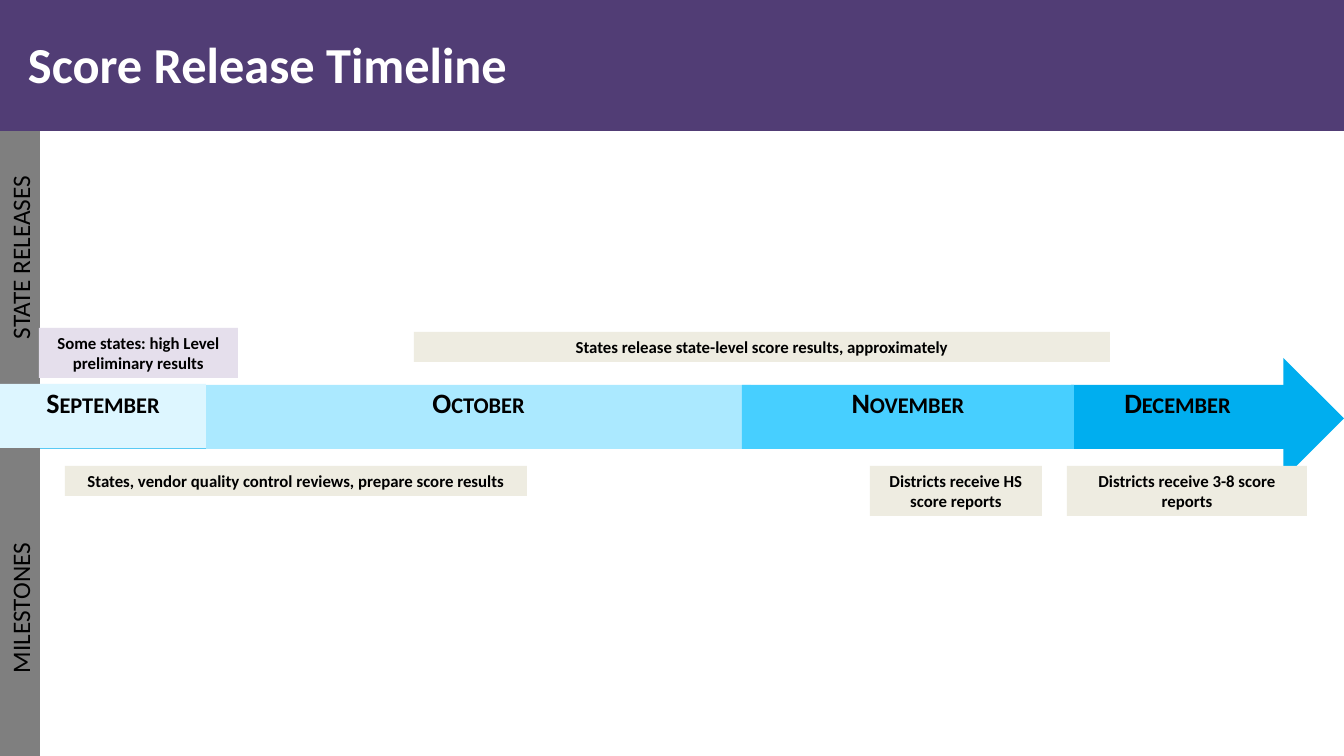
from pptx import Presentation
from pptx import util as u
from pptx.dml.color import RGBColor
from pptx.enum import shapes, text

PURPLE = RGBColor(0x51, 0x3D, 0x75)
GRAY = RGBColor(0x7F, 0x7F, 0x7F)
LILAC = RGBColor(0xE5, 0xDF, 0xEC)
CREAM = RGBColor(0xEE, 0xEC, 0xE1)
SEPTEMBER_BLUE = RGBColor(0xDD, 0xF6, 0xFF)
OCTOBER_BLUE = RGBColor(0xAB, 0xE9, 0xFF)
NOVEMBER_BLUE = RGBColor(0x47, 0xCF, 0xFF)
DECEMBER_BLUE = RGBColor(0x00, 0xAE, 0xEF)
BLACK = RGBColor(0, 0, 0)
WHITE = RGBColor(0xFF, 0xFF, 0xFF)


def px(length):
    return u.Emu(round(length * 914400 / 100.8))


class Timeline:
    font = "Calibri"

    def __init__(self, slide):
        self.slide = slide

    def block(self, left, top, width, height, color,
              preset=shapes.MSO_SHAPE.RECTANGLE):
        block = self.slide.shapes.add_shape(
            preset, px(left), px(top), px(width), px(height))
        block.shadow.inherit = False
        block.fill.solid()
        block.fill.fore_color.rgb = color
        block.line.fill.background()
        return block

    def add_words(self, shape, words, size, bold=True, color=BLACK,
                  align=text.PP_ALIGN.CENTER, anchor=text.MSO_ANCHOR.TOP,
                  insets=(10, 5, 10, 5)):
        frame = shape.text_frame
        frame.word_wrap = True
        frame.vertical_anchor = anchor
        (frame.margin_left, frame.margin_top,
         frame.margin_right, frame.margin_bottom) = map(px, insets)
        paragraph = frame.paragraphs[0]
        paragraph.alignment = align
        run = paragraph.add_run()
        run.text = words
        run.font.name = self.font
        run.font.size = u.Pt(size)
        run.font.bold = bold
        run.font.color.rgb = color
        return run

    def title(self, words):
        self.block(0, 0, 1344, 131, PURPLE)
        title = self.slide.shapes.add_textbox(0, 0, px(1075), px(134))
        self.add_words(title, words, 36, color=WHITE, align=text.PP_ALIGN.LEFT,
                       anchor=text.MSO_ANCHOR.MIDDLE, insets=(28, 5, 10, 5))
        title.text_frame.paragraphs[0].line_spacing = 0.9

    def side_label(self, words, top, bottom, insets):
        length, thickness = bottom - top, 40
        label = self.block((thickness - length) / 2,
                           (top + bottom - thickness) / 2,
                           length, thickness, GRAY)
        label.rotation = 270
        self.add_words(label, words, 18, bold=False, insets=insets)

    def month(self, name, left, width, color, top=385):
        month = self.block(left, top, width, 64, color)
        run = self.add_words(month, name, 20, insets=(10, 1, 10, 0))
        run._r.get_or_add_rPr().set("cap", "small")

    def note(self, words, left, top, width, lines, color):
        note = self.block(left, top, width, 10 + 20 * lines, color)
        self.add_words(note, words, 12)


def main():
    deck = Presentation()
    deck.slide_width, deck.slide_height = px(1344), px(756)
    timeline = Timeline(deck.slides.add_slide(deck.slide_layouts[6]))

    timeline.title("Score Release Timeline")
    timeline.block(0, 358, 1344, 121, DECEMBER_BLUE,
                   shapes.MSO_SHAPE.RIGHT_ARROW)
    timeline.side_label("MILESTONES", 422, 756, (10, 5, 48, 5))
    timeline.side_label("STATE RELEASES", 131, 422, (48, 5, 10, 5))

    timeline.month("October", 206, 545, OCTOBER_BLUE)
    timeline.month("December", 1071, 213, DECEMBER_BLUE)
    timeline.month("November", 742, 332, NOVEMBER_BLUE)
    timeline.month("September", 0, 206, SEPTEMBER_BLUE, top=384)

    for words, left, top, width, lines, color in (
        ("Some states: high Level preliminary results", 39, 328, 199, 2, LILAC),
        ("States, vendor quality control reviews, prepare score results",
         65, 466, 462, 1, CREAM),
        ("States release state-level score results, approximately",
         414, 332, 696, 1, CREAM),
        ("Districts receive HS score reports", 870, 466, 172, 2, CREAM),
        ("Districts receive 3-8 score reports", 1067, 466, 240, 2, CREAM),
    ):
        timeline.note(words, left, top, width, lines, color)

    deck.save("out.pptx")


if __name__ == "__main__":
    main()
